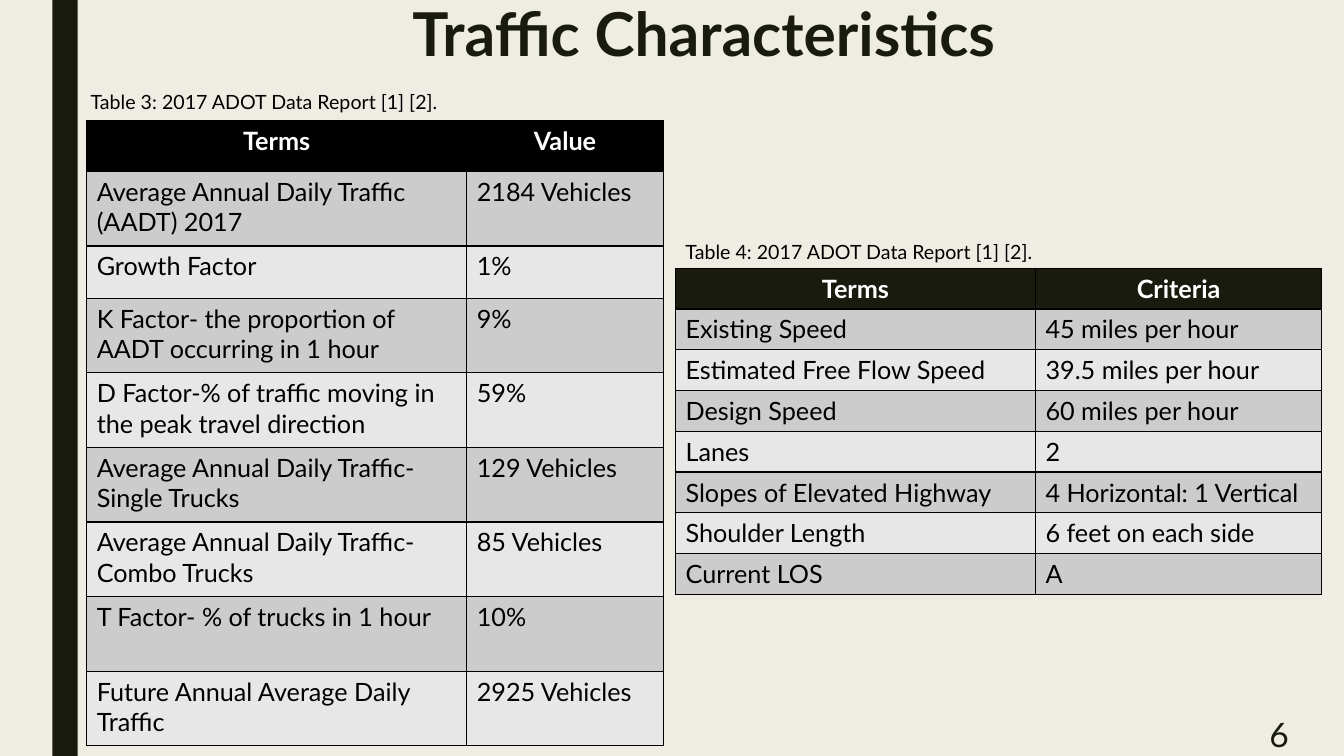
from lxml.etree import SubElement
from pptx import Presentation
from pptx.dml.color import RGBColor
from pptx.enum.shapes import MSO_SHAPE as Shape
from pptx.enum.text import MSO_ANCHOR as Anchor, PP_ALIGN as Align
from pptx.oxml.ns import qn
from pptx.util import Inches, Pt

# Content
TITLE = "Traffic Characteristics"
PAGE_NUMBER = "6"
TABLES = [
    {
        "caption": "Table 3: 2017 ADOT Data Report [1] [2].",
        "caption_at": (0.8, 0.84),
        "at": (0.86, 1.2),
        "columns": (3.77, 1.95),
        "row_heights": [0.5, 0.74, 0.52] + [0.74] * 6,
        "header": "black",
        "rows": [
            ("Terms", "Value"),
            ("Average Annual Daily Traffic (AADT) 2017", "2184 Vehicles"),
            ("Growth Factor", "1%"),
            ("K Factor- the proportion of AADT occurring in 1 hour", "9%"),
            ("D Factor-% of traffic moving in the peak travel direction", "59%"),
            ("Average Annual Daily Traffic- Single Trucks", "129 Vehicles"),
            ("Average Annual Daily Traffic- Combo Trucks", "85 Vehicles"),
            ("T Factor- % of trucks in 1 hour", "10%"),
            ("Future Annual Average Daily Traffic", "2925 Vehicles"),
        ],
    },
    {
        "caption": "Table 4: 2017 ADOT Data Report [1] [2].",
        "caption_at": (6.7, 2.33),
        "at": (6.7, 2.66),
        "columns": (3.57, 2.84),
        "row_heights": [3.24 / 8] * 8,
        "header": "dark",
        "rows": [
            ("Terms", "Criteria"),
            ("Existing Speed", "45 miles per hour"),
            ("Estimated Free Flow Speed", "39.5 miles per hour"),
            ("Design Speed", "60 miles per hour"),
            ("Lanes", "2"),
            ("Slopes of Elevated Highway", "4 Horizontal: 1 Vertical"),
            ("Shoulder Length", "6 feet on each side"),
            ("Current LOS", "A"),
        ],
    },
]

# Style
FONT = "Lato"
COLORS = {"paper": "EFEDE3", "dark": "191B0E", "black": "000000",
          "white": "FFFFFF", "odd": "CCCCCC", "even": "E7E7E7"}


def color(name):
    return RGBColor.from_string(COLORS[name])


def style(paragraph, size, ink, bold=False, align=Align.LEFT):
    paragraph.alignment = align
    font = paragraph.font
    font.name, font.size, font.bold = FONT, Pt(size), bold
    font.color.rgb = color(ink)


def add_text(slide, text, box, size, ink, align=Align.LEFT, anchor=Anchor.TOP):
    frame = slide.shapes.add_textbox(*map(Inches, box)).text_frame
    frame.word_wrap = True
    frame.vertical_anchor = anchor
    frame.text = text
    style(frame.paragraphs[0], size, ink, align=align)


def add_borders(cell):
    properties = cell._tc.get_or_add_tcPr()
    for side in ("lnL", "lnR", "lnT", "lnB"):
        line = SubElement(properties, qn(f"a:{side}"), w=str(Pt(1)))
        fill = SubElement(line, qn("a:solidFill"))
        SubElement(fill, qn("a:srgbClr"), val=COLORS["black"])


def add_data_table(slide, data):
    columns, heights, rows = data["columns"], data["row_heights"], data["rows"]
    box = (*data["at"], sum(columns), sum(heights))
    table = slide.shapes.add_table(
        len(rows), len(columns), *map(Inches, box)).table
    for column, width in zip(table.columns, columns):
        column.width = Inches(width)
    for r, (height, texts) in enumerate(zip(heights, rows)):
        table.rows[r].height = Inches(height)
        is_header = r == 0
        shade = data["header"] if is_header else "odd" if r % 2 else "even"
        for c, text in enumerate(texts):
            cell = table.cell(r, c)
            cell.text = text
            add_borders(cell)
            cell.fill.solid()
            cell.fill.fore_color.rgb = color(shade)
            style(cell.text_frame.paragraphs[0], 18,
                  "white" if is_header else "black", is_header,
                  Align.CENTER if is_header else Align.LEFT)


def main():
    deck = Presentation()
    deck.slide_width, deck.slide_height = Inches(13.33), Inches(7.5)
    slide = deck.slides.add_slide(deck.slide_layouts[5])
    slide.background.fill.solid()
    slide.background.fill.fore_color.rgb = color("paper")

    # Side band
    band = slide.shapes.add_shape(
        Shape.RECTANGLE, Inches(0.52), 0, Inches(0.25), deck.slide_height)
    band.shadow.inherit = False
    band.fill.solid()
    band.fill.fore_color.rgb = color("dark")
    band.line.fill.background()

    # Title and page number
    title = slide.shapes.title
    title.left, title.top = Inches(1.73), 0
    title.width, title.height = Inches(10.5), Inches(0.72)
    title.text_frame.text = TITLE
    title.text_frame.vertical_anchor = Anchor.TOP
    heading = title.text_frame.paragraphs[0]
    heading.line_spacing = 0.89
    style(heading, 43.2, "dark", True, Align.CENTER)
    add_text(slide, PAGE_NUMBER, (11.13, 7.06, 1.75, 0.44), 24, "dark",
             Align.RIGHT, Anchor.MIDDLE)

    # Captioned tables
    for data in TABLES:
        add_text(slide, data["caption"], (*data["caption_at"], 4.51, 0.34),
                 14, "black")
        add_data_table(slide, data)

    deck.save("out.pptx")


if __name__ == "__main__":
    main()
